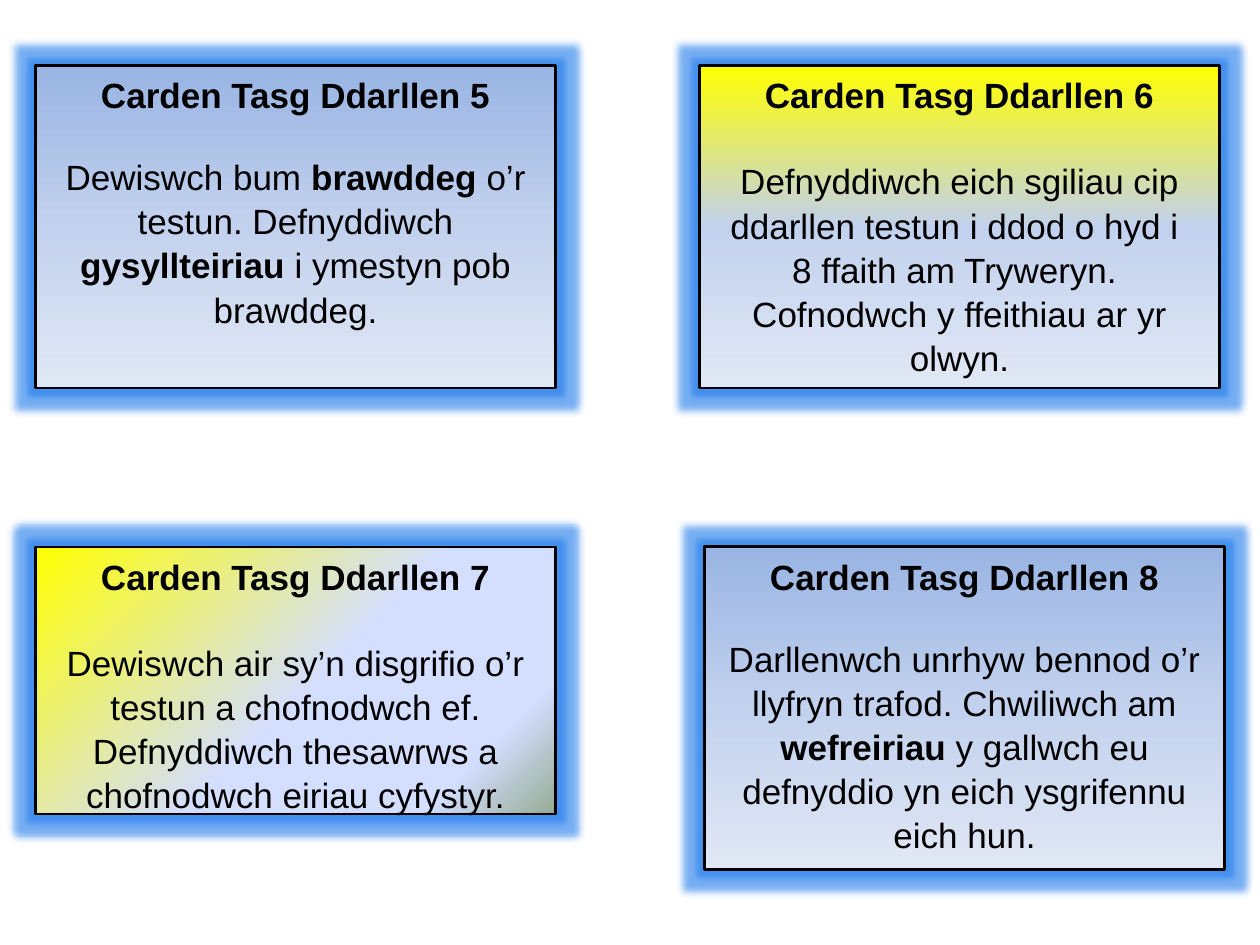
import pptx
import pptx.util
import pptx.dml.color
import pptx.enum.shapes
import pptx.enum.text
import lxml.etree
from pptx.oxml.ns import qn

Pt = pptx.util.Pt
RGB = pptx.dml.color.RGBColor
BLACK = RGB(0x00, 0x00, 0x00)
YELLOW = RGB(0xFF, 0xFF, 0x00)
SKY = RGB(0x9A, 0xB5, 0xE4)
PALE = RGB(0xC2, 0xD1, 0xED)
MIST = RGB(0xE1, 0xE8, 0xF5)
LILAC = RGB(0xD4, 0xDE, 0xFF)
SAGE = RGB(0x96, 0xAB, 0x94)
GLOW = RGB(0x1F, 0x7B, 0xEB)

BLUE = [(0, SKY), (50, PALE), (100, MIST)]
SUN = [(0, YELLOW), (50, PALE), (100, MIST)]
DAWN = [(0, YELLOW), (53, LILAC), (83, LILAC), (100, SAGE)]

WIDE, TALL, SHORT = 297.4, 184.3, 152.6
LEFT, RIGHT, TOP, LOW = 20.2, 399.6, 37.4, 312.5


def add(node, tag, **attrs):
    return lxml.etree.SubElement(node, qn(tag), attrs)


cards = [
    (5, LEFT, TOP, TALL, BLUE, 90, 21.7,
     [["Dewiswch bum ", "brawddeg", " o’r testun. Defnyddiwch ",
       "gysyllteiriau", " i ymestyn pob brawddeg."]]),
    (7, LEFT, LOW, SHORT, DAWN, 45, 24.1,
     [["Dewiswch air sy’n disgrifio o’r testun a chofnodwch ef. "
       "Defnyddiwch thesawrws a chofnodwch eiriau cyfystyr."]]),
    (6, RIGHT, TOP, TALL, SUN, 90, 24.1,
     [["Defnyddiwch eich sgiliau cip ddarllen testun i ddod o hyd i "],
      ["8 ffaith am Tryweryn. "],
      ["Cofnodwch y ffeithiau ar yr olwyn."]]),
    (8, RIGHT + 2.9, LOW, TALL, BLUE, 90, 21.7,
     [["Darllenwch unrhyw bennod o’r llyfryn trafod. Chwiliwch am ",
       "wefreiriau", " y gallwch eu defnyddio yn eich ysgrifennu eich hun."]]),
]

deck = pptx.Presentation()
deck.slide_width, deck.slide_height = Pt(720), Pt(540)
slide = deck.slides.add_slide(deck.slide_layouts[6])

for num, x, y, high, stops, turn, gap, body in cards:
    card = slide.shapes.add_shape(
        pptx.enum.shapes.MSO_SHAPE.RECTANGLE, Pt(x), Pt(y), Pt(WIDE), Pt(high))
    card.shadow.inherit = False
    card.line.color.rgb = BLACK
    card.line.width = Pt(1.5)

    card.fill.gradient()
    card.fill.gradient_angle = 360 - turn
    props = card._element.spPr
    ramp = props.find(qn("a:gradFill")).find(qn("a:gsLst"))
    for stop in list(ramp):
        ramp.remove(stop)
    for pos, tint in stops:
        stop = add(ramp, "a:gs", pos=str(pos * 1000))
        add(stop, "a:srgbClr", val=str(tint))

    glow = add(props.find(qn("a:effectLst")), "a:glow", rad=str(Pt(8)))
    tone = add(glow, "a:srgbClr", val=str(GLOW))
    add(tone, "a:alpha", val="60000")

    frame = card.text_frame
    frame.word_wrap = True
    frame.vertical_anchor = pptx.enum.text.MSO_ANCHOR.TOP
    for i, parts in enumerate([[f"Carden Tasg Ddarllen {num}"]] + body):
        para = frame.add_paragraph() if i else frame.paragraphs[0]
        para.alignment = pptx.enum.text.PP_ALIGN.CENTER
        para.line_spacing = 1.05
        para.space_after = Pt(0 if i else gap)
        para.font.name = "Arial"
        para.font.size = Pt(20)
        para.font.color.rgb = BLACK
        for j, words in enumerate(parts):
            run = para.add_run()
            run.text = words
            run.font.bold = i == 0 or j % 2 == 1

deck.save("out.pptx")
